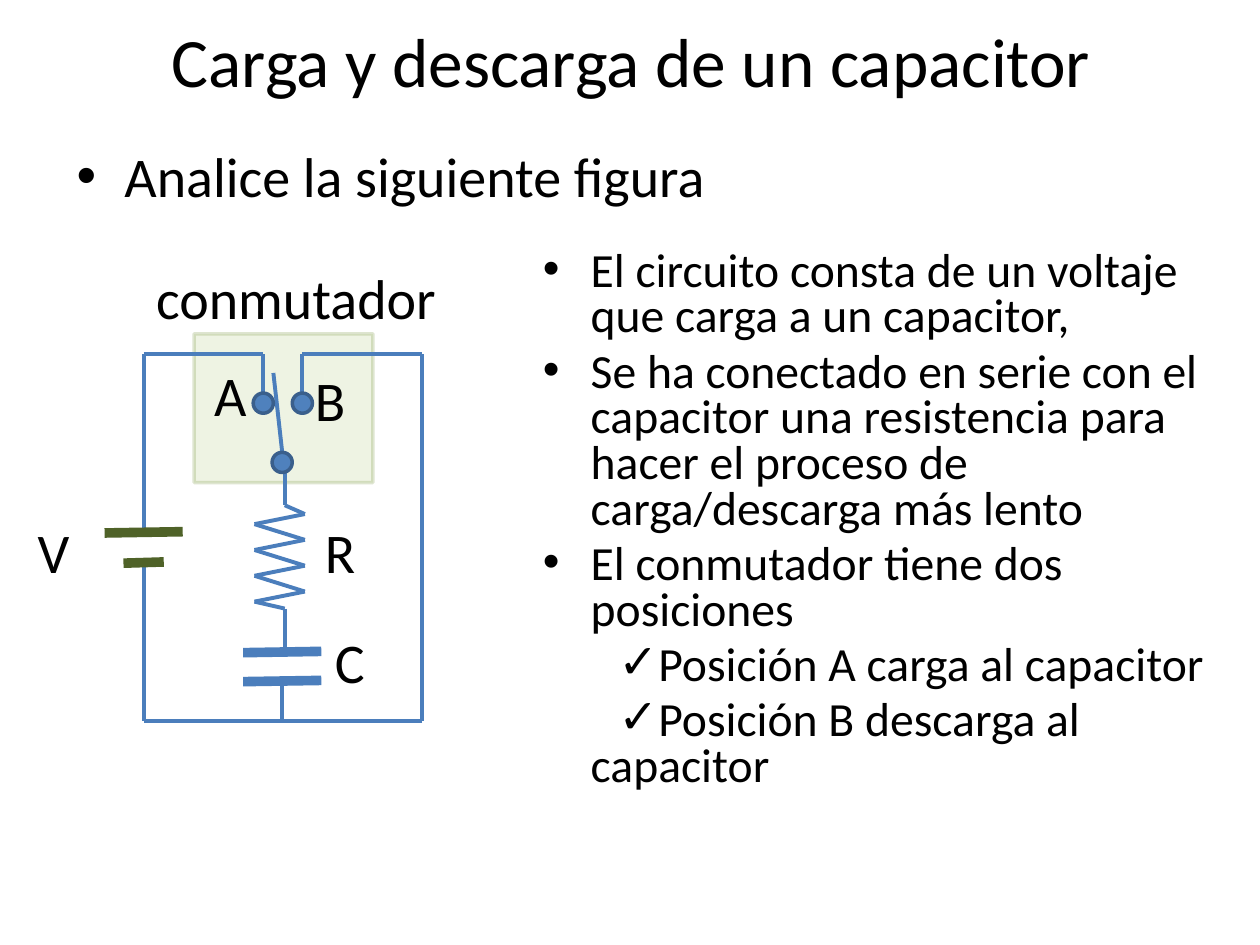
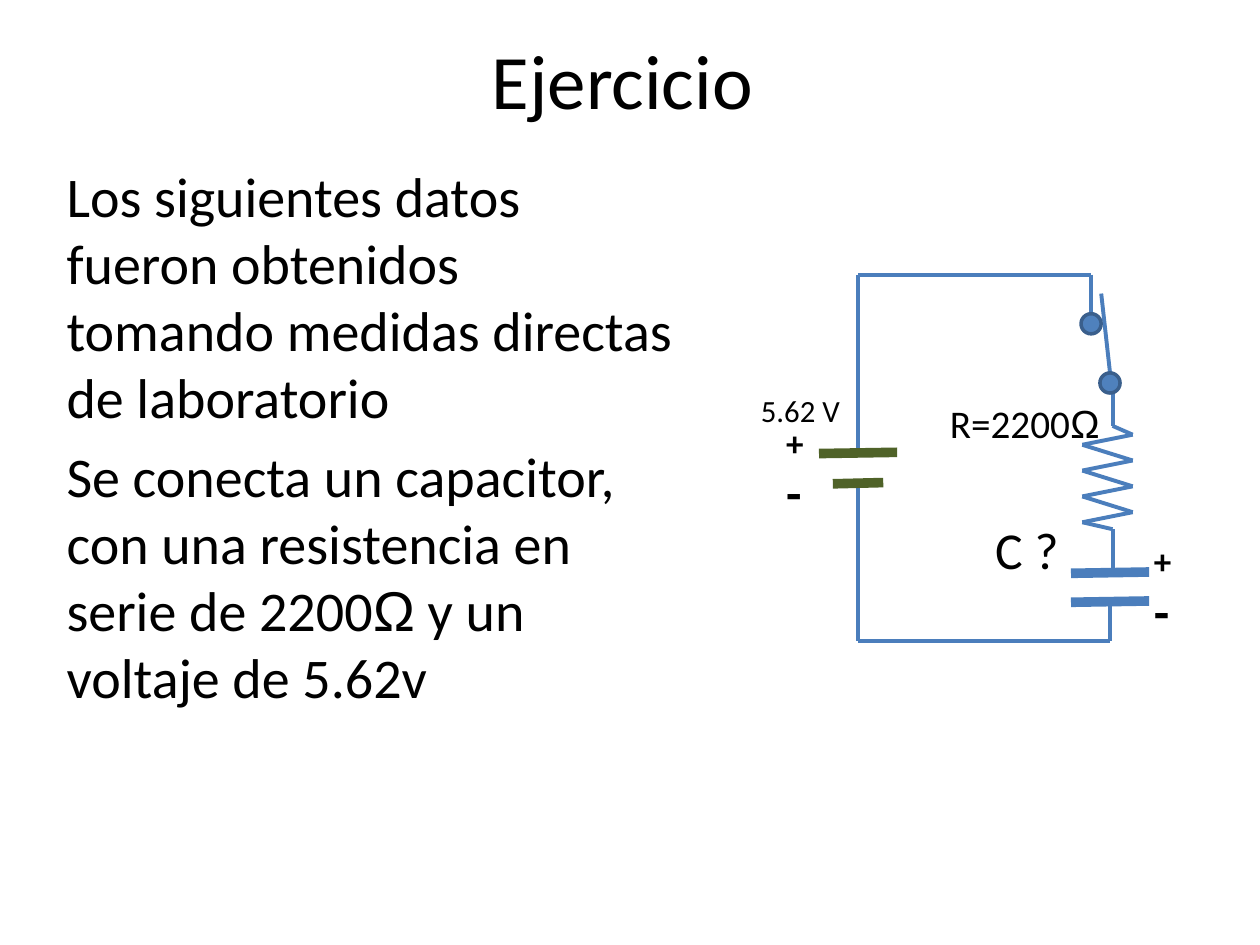
import pptx
import pptx.util
import pptx.dml.color
import pptx.enum.shapes
import pptx.enum.text
import pptx.oxml
import pptx.oxml.ns
from lxml import etree

Inches, Pt = pptx.util.Inches, pptx.util.Pt
RGB = pptx.dml.color.RGBColor
SHAPES = pptx.enum.shapes.MSO_SHAPE
qn = pptx.oxml.ns.qn

BLACK = RGB(0, 0, 0)
WIRE = RGB(0x4B, 0x7E, 0xBC)
CELL = RGB(0x4F, 0x62, 0x28)
NODE = RGB(0x4F, 0x81, 0xBD)
RIM = RGB(0x3A, 0x5F, 0x8C)
PANEL = RGB(0xD7, 0xE4, 0xBD)
EDGE = RGB(0x77, 0x93, 0x3C)
FONT = "Calibri"
THIN, THICK = 2.25, 5.5
TALL = 2.91  # height of the circuit loop
DOT = 0.16   # diameter of a switch contact


# Text
def style(run, size, font=FONT, bold=False):
    run.font.size = Pt(size)
    run.font.name = font
    run.font.bold = bold
    run.font.color.rgb = BLACK


def space(para, lines=None, mark=None, indent=0):
    """Set 20 % space before, line spacing and an optional bullet."""
    if lines:
        para.line_spacing = lines
    props = para._p.get_or_add_pPr()
    before = etree.SubElement(props, qn("a:spcBef"))
    etree.SubElement(before, qn("a:spcPct")).set("val", "20000")
    if mark:
        props.set("marL", str(Inches(0.38)))
        props.set("indent", str(Inches(indent)))
        etree.SubElement(props, qn("a:buFont")).set("typeface", "Arial")
        etree.SubElement(props, qn("a:buChar")).set("char", mark)


def text(slide, box, paras, size, lines=None):
    """Each paragraph is (text, options); Greek letters are set in Arial."""
    shape = slide.shapes.add_textbox(*map(Inches, box))
    frame = shape.text_frame
    frame.word_wrap = True
    for num, (words, opts) in enumerate(paras):
        para = frame.add_paragraph() if num else frame.paragraphs[0]
        space(para, lines, opts.get("mark"), opts.get("indent", 0))
        head, omega, tail = words.partition("Ω")
        for part, font in ((head, FONT), (omega, "Arial"), (tail, FONT)):
            if part:
                run = para.add_run()
                run.text = part
                style(run, opts.get("size", size), font, opts.get("bold", False))


def label(slide, left, top, words, size=32, wide=1.35, high=0.66, lines=None):
    text(slide, (left, top, wide, high), [(words, {})], size, lines)


def signs(slide, left, top):
    text(slide, (left, top, 0.47, 0.87),
         [("+", {"size": 20, "bold": True}), ("-", {"size": 28.8, "bold": True})],
         20, 0.8)


def title(slide, words, top, high, size):
    shape = slide.shapes.title
    shape.left, shape.top, shape.width, shape.height = map(
        Inches, (0.51, top, 9, high))
    frame = shape.text_frame
    frame.text = words
    frame.auto_size = pptx.enum.text.MSO_AUTO_SIZE.NONE
    frame.vertical_anchor = pptx.enum.text.MSO_ANCHOR.MIDDLE
    frame.paragraphs[0].alignment = pptx.enum.text.PP_ALIGN.CENTER
    style(frame.paragraphs[0].runs[0], size)


# Circuit parts
def wire(shapes, start, end, color=WIRE, width=THIN):
    line = shapes.add_connector(pptx.enum.shapes.MSO_CONNECTOR.STRAIGHT,
                                *map(Inches, (*start, *end)))
    line.line.color.rgb = color
    line.line.width = Pt(width)
    etree.SubElement(line._element.spPr, qn("a:effectLst"))


def route(shapes, points):
    for start, end in zip(points, points[1:]):
        wire(shapes, start, end)


def plate(shapes, mid, top, half, color):
    wire(shapes, (mid + half, top), (mid - half, top + 0.01), color, THICK)


def node(shapes, mid, top):
    dot = shapes.add_shape(SHAPES.OVAL, *map(
        Inches, (mid - DOT / 2, top, DOT, DOT)))
    dot.shadow.inherit = False
    dot.fill.solid()
    dot.fill.fore_color.rgb = NODE
    dot.line.color.rgb = RIM
    dot.line.width = Pt(2)


def coil(slide, mid, top):
    """Resistor with its two leads."""
    points = [(mid, top), (mid, top + 0.34)]
    for turn in range(4):
        high = top + 0.41 + turn * 0.205
        points += [(mid + 0.16, high), (mid - 0.24, high + 0.08)]
    points += [(mid, top + 1.16), (mid, top + 1.5)]
    route(slide.shapes.add_group_shape().shapes, points)


def circuit(slide, left, top, reach, minus):
    """Cell, switch, resistor and capacitor; reach is the contact's offset."""
    shapes = slide.shapes
    pole = left + reach
    stem = pole + 0.15
    base = top + TALL
    coil(slide, pole + 0.17, top + 0.86)
    # Loop through the cell
    route(shapes, [(left, top + 1.41), (left, top), (pole, top),
                   (pole, top + 0.31)])
    route(shapes, [(left, top + 1.65), (left, base), (stem, base),
                   (stem, top + 2.59)])
    plate(shapes, left, top + 1.41, 0.31, CELL)
    plate(shapes, left, top + 1.65, minus, CELL)
    # Switch
    wire(shapes, (pole + 0.08, top + 0.15), (stem, top + 0.78))
    node(shapes, pole, top + 0.31)
    node(shapes, stem, top + 0.78)
    # Capacitor
    for high in (2.36, 2.59):
        plate(shapes, stem, top + high, 0.31, WIRE)


def panel(slide, box):
    shape = slide.shapes.add_shape(SHAPES.RECTANGLE, *map(Inches, box))
    shape.shadow.inherit = False
    shape.fill.solid()
    shape.fill.fore_color.rgb = PANEL
    shape.line.color.rgb = EDGE
    shape.line.width = Pt(2)
    colors = shape._element.spPr.iter(qn("a:srgbClr"))
    for color, alpha in zip(colors, (42000, 23000)):
        etree.SubElement(color, qn("a:alpha")).set("val", str(alpha))


# Slides
def charge(slide):
    left, top = 1.14, 2.81
    panel(slide, (left + 0.4, top - 0.16, 1.42, 1.18))
    title(slide, "Carga y descarga de un capacitor", 0.13, 0.69, 39.6)
    dot = {"mark": "•", "indent": -0.38}
    tick = {"mark": "✓", "indent": 0.22}
    text(slide, (0.51, 1.07, 9, 0.58), [("Analice la siguiente figura", dot)], 32)
    circuit(slide, left, top, 0.95, 0.16)
    # Discharge branch
    pole, side = left + 1.26, left + 2.21
    route(slide.shapes, [(pole, top + 0.31), (pole, top), (side, top),
                         (side, top + TALL), (left + 1.1, top + TALL)])
    node(slide.shapes, pole, top + 0.31)
    for words, across, down in (("V", -0.94, 1.25), ("R", 1.34, 1.25),
                                ("C", 1.42, 2.12), ("B", 1.26, 0.04),
                                ("A", 0.46, 0)):
        label(slide, left + across, top + down, words)
    label(slide, left, top - 0.71, "conmutador", wide=2.68, high=0.58, lines=0.9)
    text(slide, (4.21, 1.94, 5.79, 4.33), [
        ("El circuito consta de un voltaje que carga a un capacitor,", dot),
        ("Se ha conectado en serie con el capacitor una resistencia para "
         "hacer el proceso de carga/descarga más lento", dot),
        ("El conmutador tiene dos posiciones", dot),
        ("Posición A carga al capacitor", tick),
        ("Posición B descarga al capacitor", tick)], 27.2, 0.8)


def task(slide):
    left, top = 6.81, 2.18
    title(slide, "Ejercicio ", 0, 1.25, 44)
    text(slide, (0.43, 1.23, 5.04, 5.35), [
        ("Los siguientes datos fueron obtenidos tomando medidas directas "
         "de laboratorio", {}),
        ("Se conecta un capacitor, con una resistencia en serie de 2200Ω "
         "y un voltaje de 5.62v", {})], 32)
    circuit(slide, left, top, 1.85, 0.2)
    label(slide, left - 0.87, top + 0.94, "5.62 V", 17.6, 0.91, 0.55, 0.8)
    label(slide, left + 0.63, top + 0.94, "R=2200Ω", 22.4, 1.46, 0.71)
    label(slide, left + 0.99, top + 1.88, "C ?", 29.6, 0.71)
    signs(slide, left - 0.67, top + 1.18)
    signs(slide, left + 2.25, top + 2.12)


def main():
    deck = pptx.Presentation()
    deck.slide_width, deck.slide_height = Inches(10), Inches(7.5)
    for build in (charge, task):
        build(deck.slides.add_slide(deck.slide_layouts[5]))
    deck.save("out.pptx")


if __name__ == "__main__":
    main()
